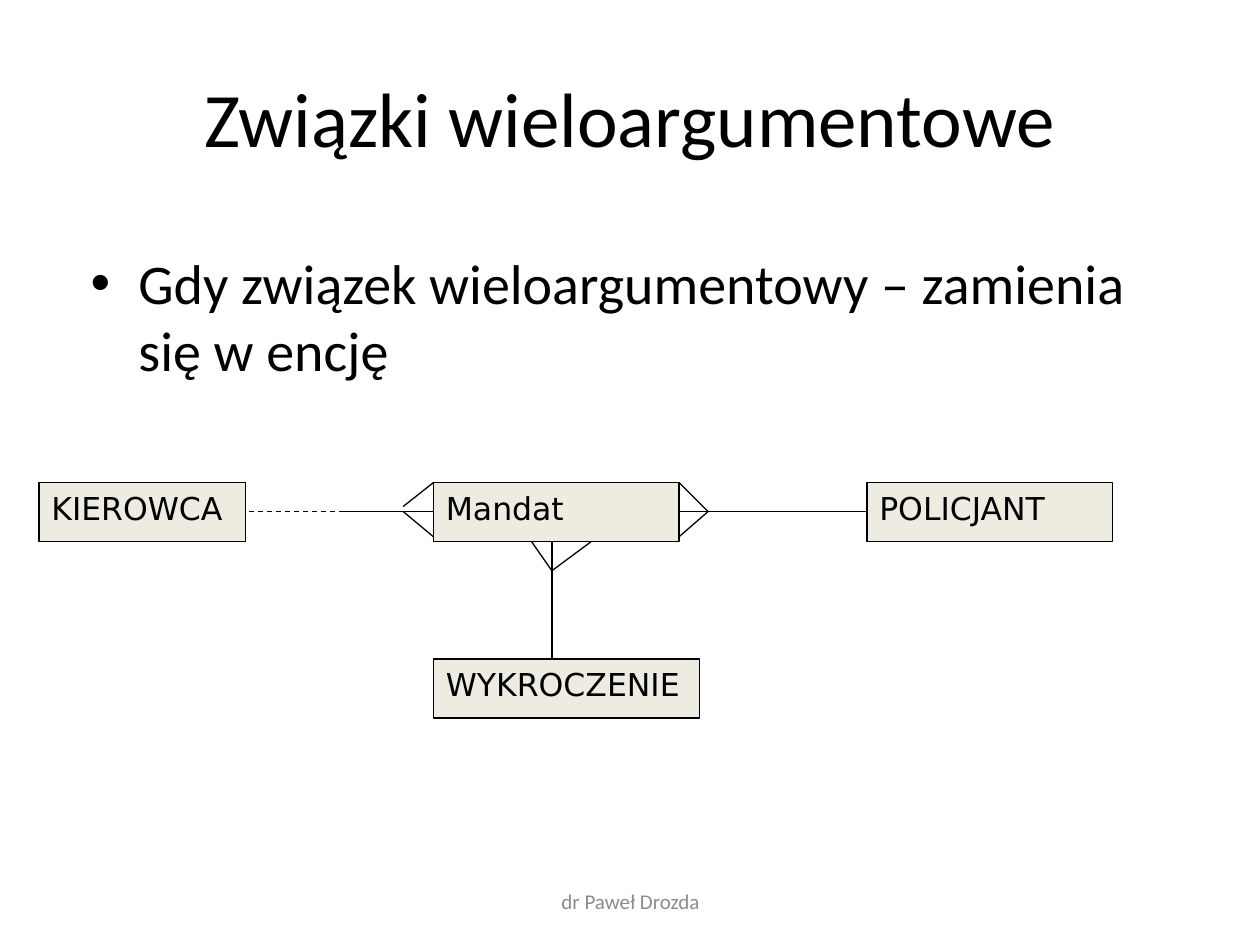
from dataclasses import dataclass
from lxml.etree import SubElement
from pptx import Presentation
from pptx.dml.color import RGBColor
from pptx.enum.dml import MSO_LINE
from pptx.enum.shapes import MSO_CONNECTOR, MSO_SHAPE
from pptx.enum.text import MSO_ANCHOR, PP_ALIGN
from pptx.oxml.ns import qn
from pptx.util import Inches, Pt


@dataclass(frozen=True)
class Theme:
    ink: str = "000000"
    gray: str = "8C8C8C"
    sand: str = "EEECE1"
    sans: str = "Calibri"
    mono: str = "DejaVu Sans"
    head: int = 44
    body: int = 32
    label: int = 18
    foot: int = 12
    line: float = 0.75


theme = Theme()

TITLE = "Związki wieloargumentowe"
POINT = "Gdy związek wieloargumentowy – zamienia się w encję"
FOOT = "dr Paweł Drozda"

TALL, ROW, LOW = 0.47, 3.83, 5.23
MID, BASE = 4.06, ROW + TALL
LEFT, RIGHT, STEM = 3.44, 5.39, 4.38
HALF, TOE = 2.73, 4.26

BOXES = [
    ("Mandat", LEFT, ROW, RIGHT - LEFT),
    ("POLICJANT", 6.88, ROW, 1.95),
    ("KIEROWCA", 0.31, ROW, 1.64),
    ("WYKROCZENIE", LEFT, LOW, 2.11),
]
LINES = [
    (6.88, MID, RIGHT, MID),
    (RIGHT, ROW, 5.62, MID),
    (RIGHT, TOE, 5.62, MID),
    (LEFT, MID, HALF, MID),
    (3.2, MID, LEFT, TOE),
    (3.2, 4.02, LEFT, ROW),
    (STEM, LOW, STEM, BASE),
    (4.22, BASE, STEM, 4.53),
    (STEM, 4.53, 4.69, BASE),
]
DASHED = (HALF, MID, 1.95, MID)


def write(shape, text, size, face, color=theme.ink, align=PP_ALIGN.LEFT,
          anchor=MSO_ANCHOR.TOP):
    frame = shape.text_frame
    frame.word_wrap = True
    frame.vertical_anchor = anchor
    para = frame.paragraphs[0]
    para.text = text
    para.alignment = align
    para.font.size = Pt(size)
    para.font.name = face
    para.font.color.rgb = RGBColor.from_string(color)
    return para


def add_text(slide, area, *args, **style):
    return write(slide.shapes.add_textbox(*map(Inches, area)), *args, **style)


def add_bullet(para):
    para.space_before = Pt(theme.body * 0.2)
    props = para._p.get_or_add_pPr()
    props.set("marL", str(Inches(0.38)))
    props.set("indent", str(Inches(-0.38)))
    SubElement(props, qn("a:buFont"), typeface="Arial")
    SubElement(props, qn("a:buChar"), char="•")


def stroke(line):
    line.color.rgb = RGBColor.from_string(theme.ink)
    line.width = Pt(theme.line)


def add_box(slide, text, left, top, width):
    area = map(Inches, (left, top, width, TALL))
    box = slide.shapes.add_shape(MSO_SHAPE.RECTANGLE, *area)
    box.shadow.inherit = False
    box.fill.solid()
    box.fill.fore_color.rgb = RGBColor.from_string(theme.sand)
    stroke(box.line)
    write(box, text, theme.label, theme.mono)


def add_line(slide, ends):
    link = slide.shapes.add_connector(MSO_CONNECTOR.STRAIGHT, *map(Inches, ends))
    stroke(link.line)
    SubElement(link._element.spPr, qn("a:effectLst"))
    return link


def main():
    deck = Presentation()
    deck.slide_width, deck.slide_height = Inches(10), Inches(7.5)
    slide = deck.slides.add_slide(deck.slide_layouts[6])
    mid = {"align": PP_ALIGN.CENTER, "anchor": MSO_ANCHOR.MIDDLE}
    add_text(slide, (0.5, 0.3, 9, 1.25), TITLE, theme.head, theme.sans, **mid)
    add_bullet(add_text(slide, (0.62, 1.92, 8.75, 1.36), POINT, theme.body, theme.sans))
    add_text(slide, (3.42, 6.95, 3.17, 0.4), FOOT, theme.foot, theme.sans,
             theme.gray, **mid)
    for box in BOXES:
        add_box(slide, *box)
    for ends in LINES:
        add_line(slide, ends)
    add_line(slide, DASHED).line.dash_style = MSO_LINE.DASH
    deck.save("out.pptx")


if __name__ == "__main__":
    main()
